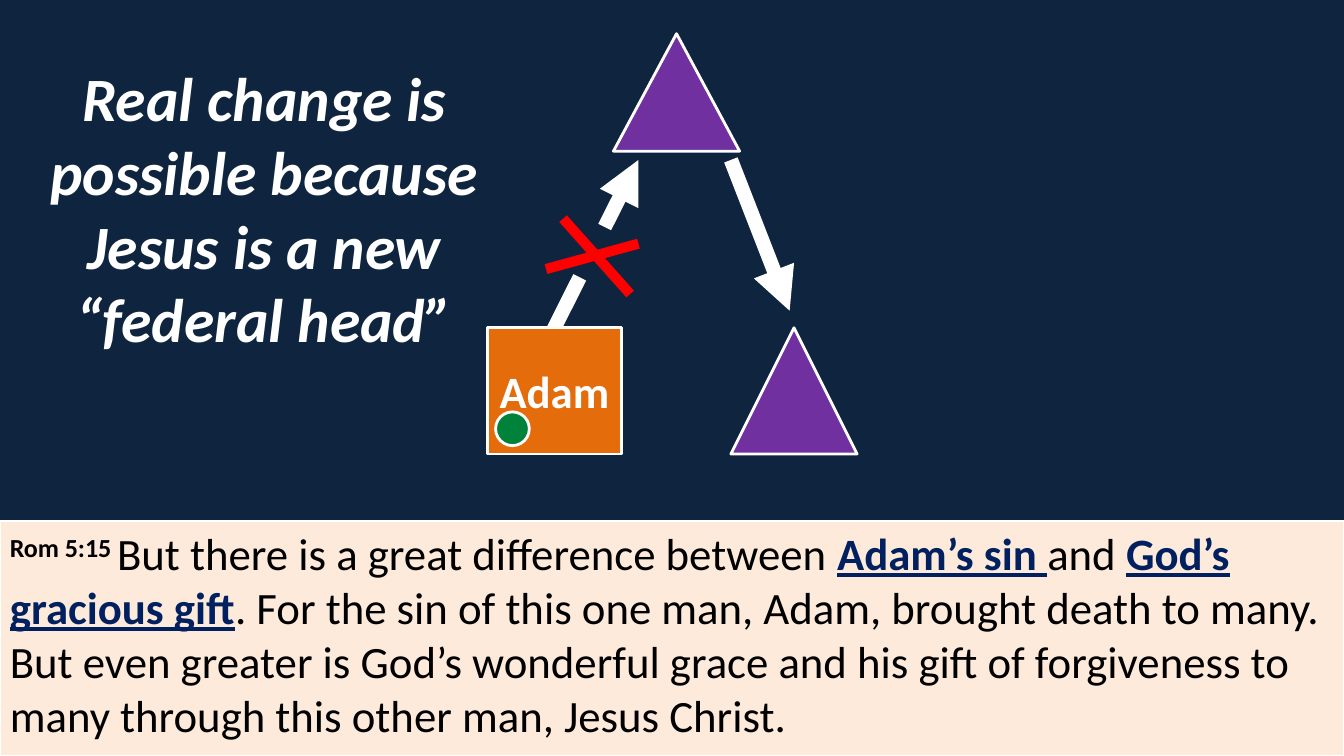
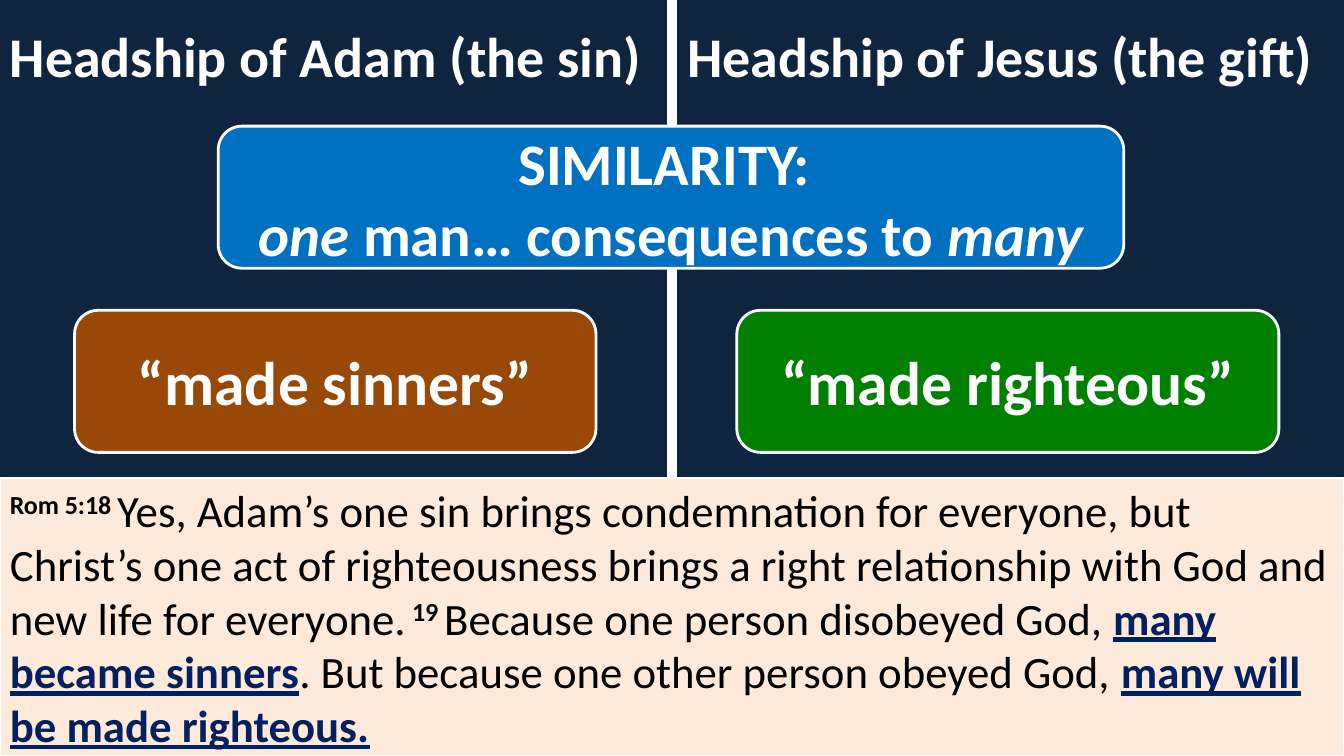
from lxml import etree
from pptx import Presentation
from pptx.dml.color import RGBColor
from pptx.enum import shapes, text
from pptx.oxml import ns
from pptx.util import Cm, Pt

NAVY = RGBColor(0x0F, 0x24, 0x3E)
CREAM = RGBColor(0xFD, 0xEA, 0xDA)
WHITE = RGBColor(0xFF, 0xFF, 0xFF)
BLACK = RGBColor(0x00, 0x00, 0x00)
INK_BLUE = RGBColor(0x00, 0x20, 0x60)
ORANGE = RGBColor(0xE4, 0x6C, 0x0A)
PURPLE = RGBColor(0x70, 0x30, 0xA0)
RED = RGBColor(0xFF, 0x00, 0x00)
LEAF = RGBColor(0x00, 0x82, 0x3B)
BLUE = RGBColor(0x00, 0x70, 0xC0)
BROWN = RGBColor(0x98, 0x48, 0x07)
GREEN = RGBColor(0x00, 0x80, 0x00)

FONT = "Calibri"
WIDTH, HEIGHT = 33.87, 19.05
KIND = shapes.MSO_SHAPE

PLAIN = {}
ITALIC = {"italic": True}
VERSE = {"bold": True, "raised": True}
KEY = {"bold": True, "underline": True, "color": INK_BLUE}


def write(shape, paragraphs, size=32, color=WHITE, bold=True, italic=False,
          align=text.PP_ALIGN.CENTER, anchor=text.MSO_ANCHOR.MIDDLE):
    """Fill a shape with paragraphs, each a list of (words, run style)."""
    frame = shape.text_frame
    frame.word_wrap = True
    frame.vertical_anchor = anchor
    for number, runs in enumerate(paragraphs):
        paragraph = frame.paragraphs[0] if number == 0 else frame.add_paragraph()
        paragraph.alignment = align
        for words, style in runs:
            run = paragraph.add_run()
            run.text = words
            font = run.font
            font.name, font.size = FONT, Pt(size)
            font.bold = style.get("bold", bold)
            font.italic = style.get("italic", italic)
            font.underline = style.get("underline", False)
            font.color.rgb = style.get("color", color)
            if style.get("raised"):
                font._element.set("baseline", "30000")


def add_block(slide, kind, box, fill, line_width=2):
    block = slide.shapes.add_shape(kind, *map(Cm, box))
    block.shadow.inherit = False
    block.fill.solid()
    block.fill.fore_color.rgb = fill
    block.line.color.rgb = WHITE
    block.line.width = Pt(line_width)
    return block


def add_stroke(slide, start, end, color=WHITE, width=10.25, arrow=False):
    stroke = slide.shapes.add_connector(
        shapes.MSO_CONNECTOR.STRAIGHT, *map(Cm, (*start, *end)))
    stroke.line.color.rgb = color
    stroke.line.width = Pt(width)
    if arrow:
        etree.SubElement(stroke.line._get_or_add_ln(), ns.qn("a:tailEnd"), type="triangle")
    etree.SubElement(stroke._element.spPr, ns.qn("a:effectLst"))


def add_words(slide, box, words, **style):
    write(slide.shapes.add_textbox(*map(Cm, box)), [[(words, PLAIN)]], **style)


def add_passage(slide, top, runs):
    """Scripture band from the given height down to the slide's foot."""
    band = add_block(slide, KIND.RECTANGLE, (0, top, WIDTH, HEIGHT - top), CREAM, 1.5)
    write(band, [runs], color=BLACK, bold=False,
          align=text.PP_ALIGN.LEFT, anchor=text.MSO_ANCHOR.TOP)


def add_headship_diagram(slide, left, top):
    """Adam's broken way up to the head, and the way down from it."""
    def at(x, y):
        return left + x, top + y

    add_stroke(slide, at(1.48, 7.83), at(2.33, 6.14))
    add_stroke(slide, at(2.96, 4.87), at(3.81, 3.18), arrow=True)
    adam = add_block(slide, KIND.RECTANGLE, (*at(0, 7.41), 3.39, 3.18), ORANGE)
    write(adam, [[("Adam", PLAIN)]])
    for start, end in (((1.91, 4.66), (3.6, 6.56)), ((3.81, 5.29), (1.48, 5.93))):
        add_stroke(slide, at(*start), at(*end), RED, 7.25)
    for x, y, height in ((3.18, 0, 2.96), (6.14, 7.41, 3.18)):
        add_block(slide, KIND.ISOSCELES_TRIANGLE, (*at(x, y), 3.18, height), PURPLE)
    add_stroke(slide, at(6.14, 3.18), at(7.62, 6.98), arrow=True)
    add_block(slide, KIND.OVAL, (*at(0.21, 9.53), 0.85, 0.85), LEAF)


def add_comparison(slide, height):
    """Two columns parted by a line, with their shared point across it."""
    middle = WIDTH / 2
    for left, heading in ((0, "Headship of Adam (the sin)"),
                          (17.07, "Headship of Jesus (the gift)")):
        add_words(slide, (left, 0.43, 16.8, 1.95), heading, size=40,
                  align=text.PP_ALIGN.LEFT, anchor=text.MSO_ANCHOR.TOP)
    add_stroke(slide, (middle, 0), (middle, height), width=7.25)
    panels = (
        ((5.5, 3.18, 22.82), BLUE, 42, [
            [("SIMILARITY: ", PLAIN)],
            [("one", ITALIC), (" man… consequences to ", PLAIN), ("many", ITALIC)]]),
        ((1.88, 7.82, 13.14), BROWN, 44, [[("“made sinners”", PLAIN)]]),
        ((18.57, 7.82, 13.66), GREEN, 44, [[("“made righteous”", PLAIN)]]),
    )
    for place, fill, size, paragraphs in panels:
        panel = add_block(slide, KIND.ROUNDED_RECTANGLE, (*place, 3.58), fill)
        write(panel, paragraphs, size=size)


def new_slide(deck):
    slide = deck.slides.add_slide(deck.slide_layouts[6])
    slide.background.fill.solid()
    slide.background.fill.fore_color.rgb = NAVY
    return slide


def build_federal_head(deck):
    slide = new_slide(deck)
    add_passage(slide, 13.13, [
        ("Rom 5:15 ", VERSE),
        ("But there is a great difference between ", PLAIN),
        ("Adam’s sin ", KEY),
        ("and ", PLAIN),
        ("God’s gracious gift", KEY),
        (". For the sin of this one man, Adam, brought death to many. But even "
         "greater is God’s wonderful grace and his gift of forgiveness to many "
         "through this other man, Jesus Christ.", PLAIN),
    ])
    add_headship_diagram(slide, 12.28, 0.85)
    add_words(slide, (0.1, 1.33, 13.13, 7.8),
              "Real change is possible because Jesus is a new “federal head”",
              size=44, italic=True)


def build_two_headships(deck):
    slide = new_slide(deck)
    passage_top = 12.04
    add_comparison(slide, passage_top)
    add_passage(slide, passage_top, [
        ("Rom 5:18 ", VERSE),
        ("Yes, Adam’s one sin brings condemnation for everyone, but Christ’s one "
         "act of righteousness brings a right relationship with God and new life "
         "for everyone.", PLAIN),
        (" 19 ", VERSE),
        ("Because one person disobeyed God, ", PLAIN),
        ("many became sinners", KEY),
        (". But because one other person obeyed God, ", PLAIN),
        ("many will be made righteous.", KEY),
    ])


def main():
    deck = Presentation()
    deck.slide_width, deck.slide_height = Cm(WIDTH), Cm(HEIGHT)
    build_federal_head(deck)
    build_two_headships(deck)
    deck.save("out.pptx")


if __name__ == "__main__":
    main()
